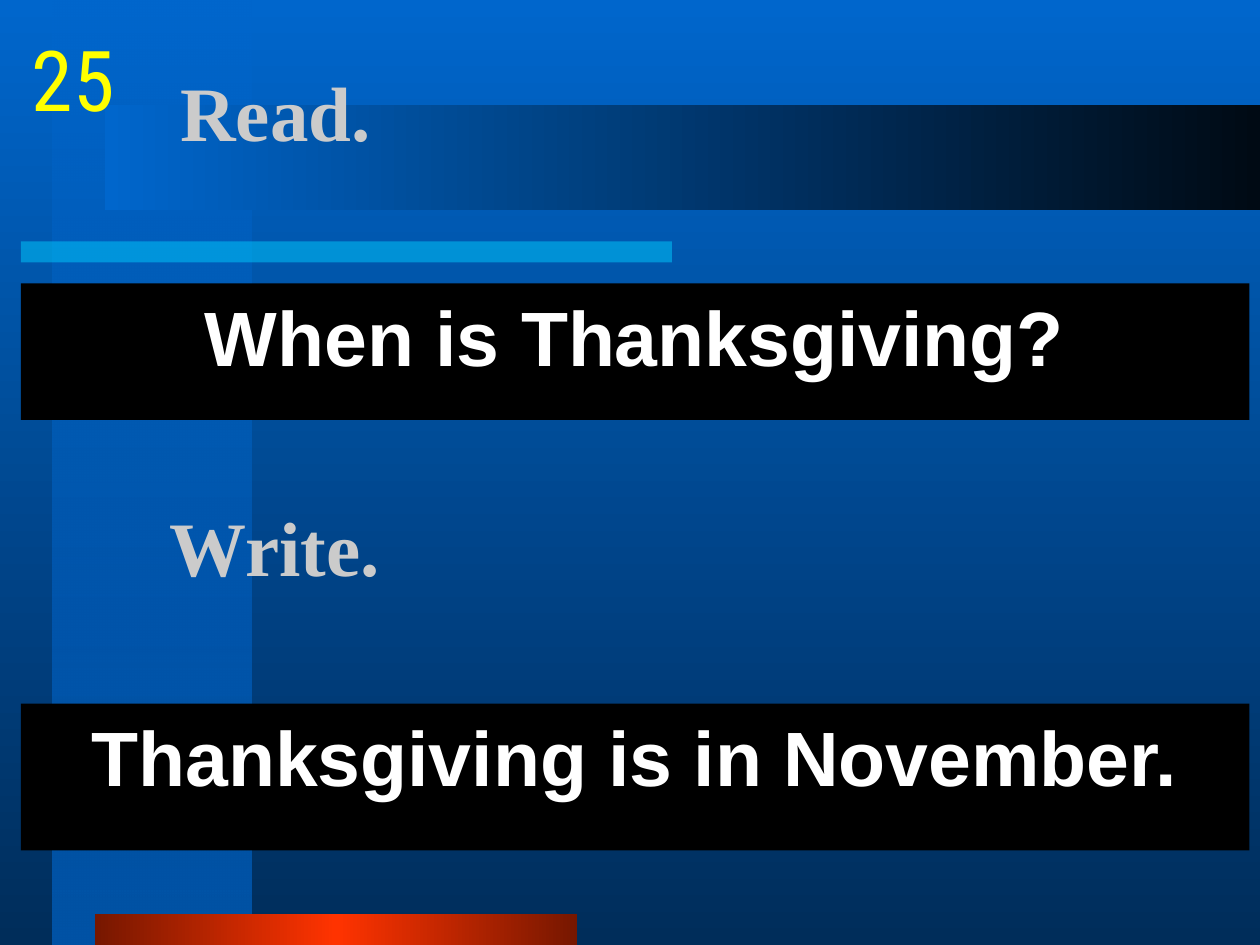
"""Build the 25-point Thanksgiving question slide."""
import copy
from lxml import etree
from pptx import Presentation, util as u
from pptx.dml.color import RGBColor
from pptx.enum import shapes, text
from pptx.oxml.ns import qn

C = {
    "blue": "0066CC", "navy": "002D5A", "stripe": "0053A6", "night": "000A14",
    "cyan": "00CCFF", "red": "FF3300", "maroon": "761700", "black": "000000",
    "white": "FFFFFF", "grey": "CBCBCB", "yellow": "FFFF00",
}
CELL = u.Inches(1) / 12

prs = Presentation()
prs.slide_width, prs.slide_height = round(120 * CELL), round(90 * CELL)
s = prs.slides.add_slide(prs.slide_layouts[6])


def paint(fill, root, colors, angle=0, alphas=()):
    if len(colors) == 1:
        fill.solid()
        fill.fore_color.rgb = RGBColor.from_string(C[colors[0]])
    else:
        fill.gradient()
        fill.gradient_angle = angle
        stops = root.find(".//" + qn("a:gsLst"))
        for _ in colors[2:]:
            stops.append(copy.deepcopy(stops[0]))
        for i, (stop, color) in enumerate(zip(fill.gradient_stops, colors)):
            stop.color.rgb = RGBColor.from_string(C[color])
            stop.position = i / (len(colors) - 1)
    for rgb, alpha in zip(root.iter(qn("a:srgbClr")), alphas):
        etree.SubElement(rgb, qn("a:alpha")).set("val", str(alpha * 1000))


def add_box(cells, colors=(), angle=0, alphas=()):
    sp = s.shapes.add_shape(shapes.MSO_SHAPE.RECTANGLE, *[round(n * CELL) for n in cells])
    sp.shadow.inherit = False
    sp.line.fill.background()
    if colors:
        paint(sp.fill, sp._element.spPr, colors, angle, alphas)
    else:
        sp.fill.background()
    return sp


paint(s.background.fill, s._element, ["blue", "navy"], 270)

for cells, colors, angle, alphas in [
    ((5, 0, 19, 90), ["blue", "stripe"], 270, [50]),
    ((2, 23, 62, 2), ["cyan"], 0, [50]),
    ((9, 87, 46, 3), ["maroon", "red", "maroon"], 0, []),
    ((10, 10, 110, 10), ["blue", "night"], 0, []),
]:
    add_box(cells, colors, angle, alphas)

left, center = text.PP_ALIGN.LEFT, text.PP_ALIGN.CENTER
top, middle = text.MSO_ANCHOR.TOP, text.MSO_ANCHOR.MIDDLE
for words, cells, fill, font, size, color, bold, align, anchor, before in [
    ("Read.", (16, 3, 102, 15), [], "Times New Roman", 44, "grey", True, left, middle, 0),
    ("When is Thanksgiving?", (2, 27, 117, 13), ["black"], "Arial", 44, "white", True, center, top, 5),
    ("Write.", (15, 42, 102, 20), [], "Times New Roman", 44, "grey", True, left, middle, 0),
    ("Thanksgiving is in November.", (2, 67, 117, 14), ["black"], "Arial", 44, "white", True, center, top, 5),
    ("25", (2, 2, 10, 10), [], "Roboto Condensed", 48, "yellow", False, center, top, 0),
]:
    tf = add_box(cells, fill).text_frame
    tf.text = words
    tf.word_wrap = words != "25"
    tf.vertical_anchor = anchor
    p = tf.paragraphs[0]
    p.alignment = align
    p.space_before = u.Pt(before)
    r = p.runs[0]
    r.font.name, r.font.size, r.font.bold = font, u.Pt(size), bold
    r.font.color.rgb = RGBColor.from_string(C[color])

prs.save("out.pptx")
